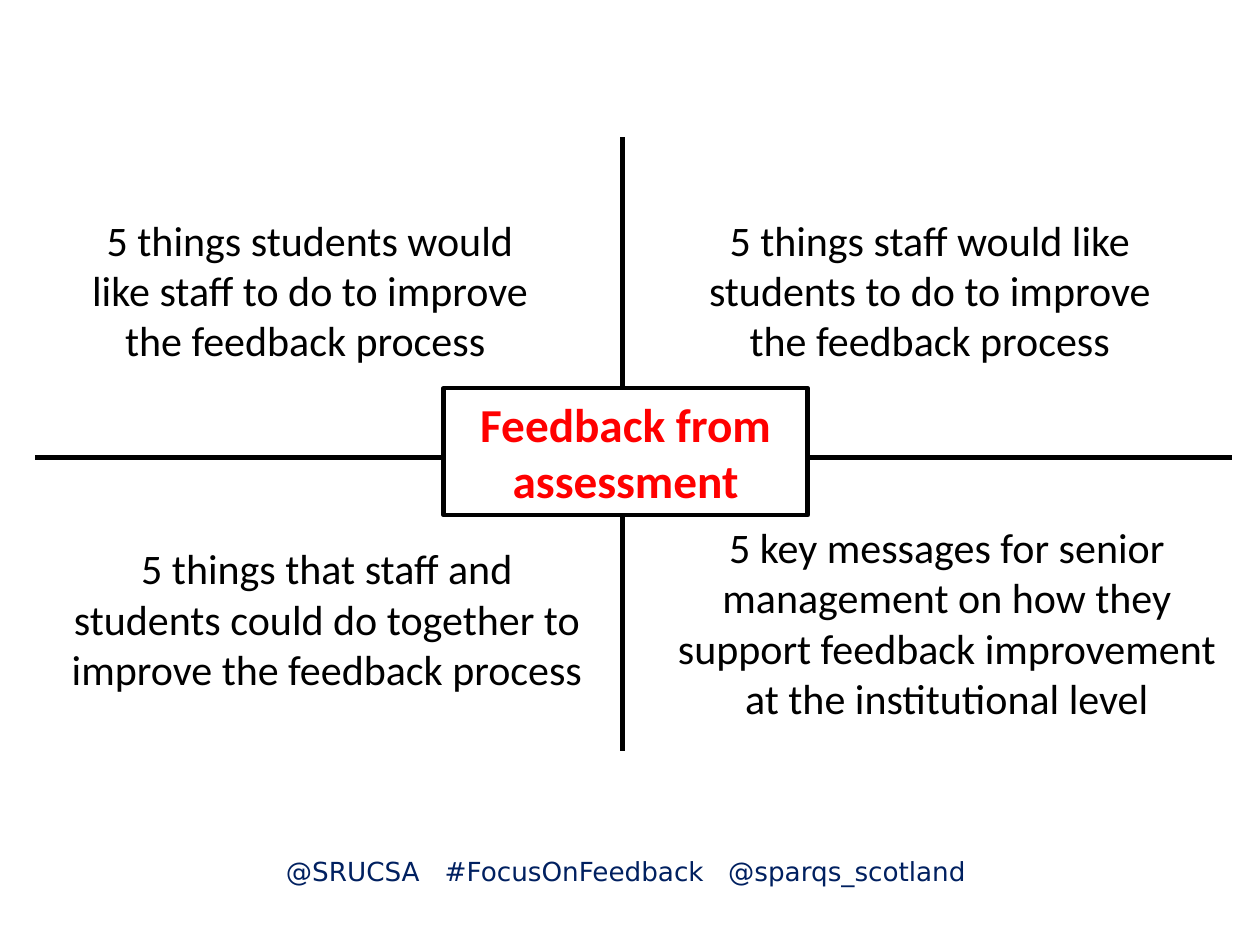
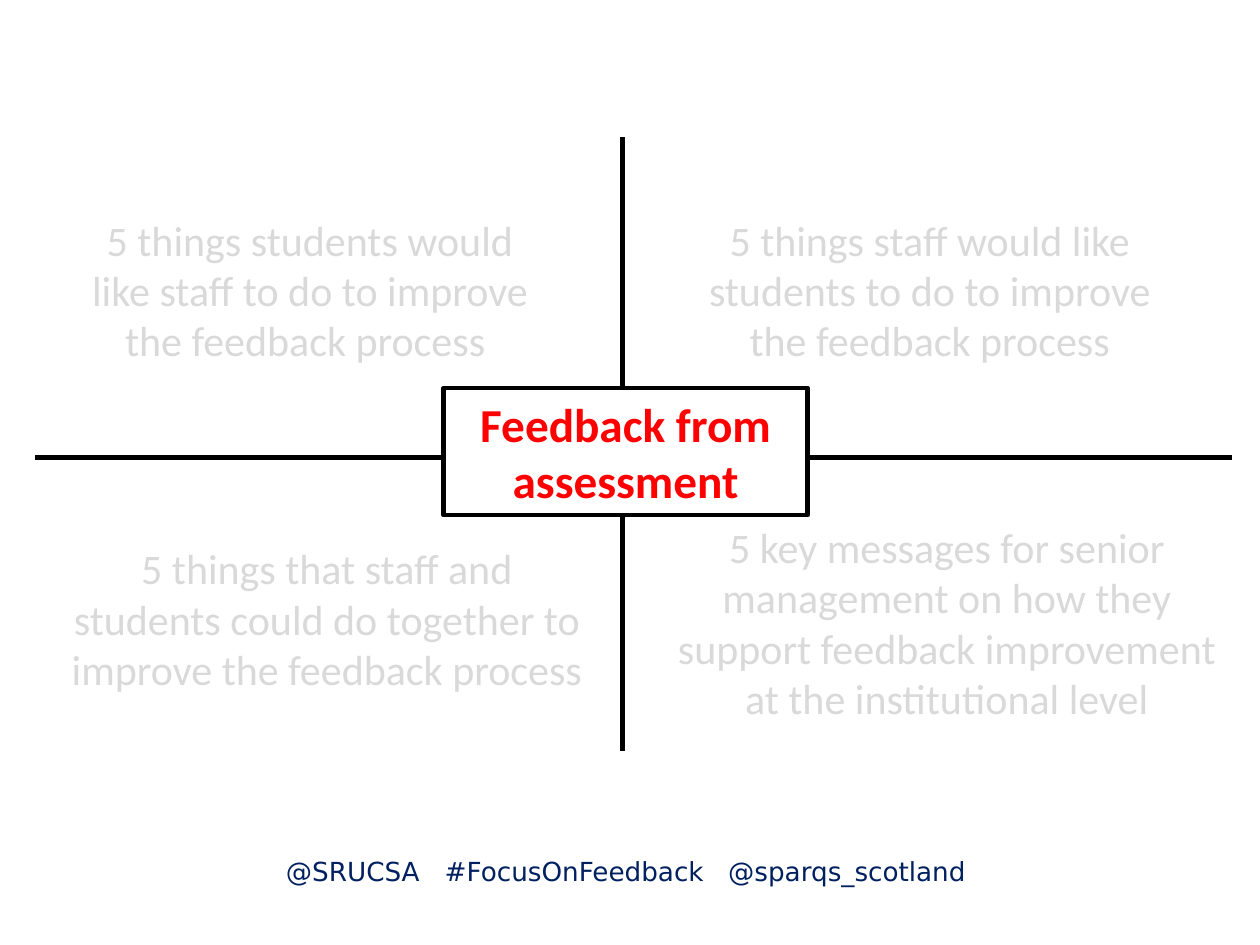
from lxml import etree
from pptx import Presentation
from pptx.dml.color import RGBColor
from pptx.enum.shapes import MSO_CONNECTOR, MSO_SHAPE
from pptx.enum.text import MSO_ANCHOR, PP_ALIGN
from pptx.oxml.ns import qn
from pptx.util import Inches, Pt

STRAIGHT = MSO_CONNECTOR.STRAIGHT
RECTANGLE = MSO_SHAPE.RECTANGLE
LEFT, CENTER = PP_ALIGN.LEFT, PP_ALIGN.CENTER
TOP, MIDDLE = MSO_ANCHOR.TOP, MSO_ANCHOR.MIDDLE

COLORS = {
    "ink": "000000",
    "faded": "D9D9D9",
    "paper": "FFFFFF",
    "topic": "FF0000",
    "footer": "002060",
}
BODY_FONT, FOOTER_FONT = "Calibri", "DejaVu Sans"
LINE_WIDTH = Pt(2.5)

# The slide is a grid of square cells, 100 columns by 75 rows
COLUMNS, ROWS = 100, 75
CELL = Inches(0.1)

# Axes of the cross: fixed position, start and end
VERTICAL_AXIS = (49.4, 10.9, 49.4, 59.6)
HORIZONTAL_AXIS = (2.8, 36.3, 97.8, 36.3)

TOPIC = "Feedback from assessment"
TOPIC_AREA = (35.2, 30.8, 28.9, 10.1)

# Prompt and area (column, row, width, height) of each quadrant
QUADRANTS = [
    ("5 things students would like staff to do to improve the feedback process ",
     (5.7, 16.5, 37.8, 13.1)),
    ("5 things staff would like students to do to improve the feedback process",
     (53.6, 16.5, 40.4, 13.1)),
    ("5 things that staff and students could do together to improve the feedback process",
     (4.1, 42.6, 43.7, 13.1)),
    ("5 key messages for senior management on how they support feedback "
     "improvement at the institutional level",
     (52.5, 40.9, 45.3, 17.2)),
]

FOOTER_TAGS = ["@SRUCSA", "#FocusOnFeedback", "@sparqs_scotland"]
FOOTER_AREA = (15.8, 67.4, 68.4, 3.5)
FOOTER_INDENT = 6.9
FOOTER_STOPS = [12.6, 35.1]


def cells(*counts):
    return [round(count * CELL) for count in counts]


def color(name):
    return RGBColor.from_string(COLORS[name])


def write(box, text, size=24, font=BODY_FONT, ink="ink", bold=False,
          align=CENTER, anchor=TOP, stops=()):
    frame = box.text_frame
    frame.word_wrap = True
    frame.vertical_anchor = anchor
    para = frame.paragraphs[0]
    para.alignment = align
    if stops:
        tabs = etree.SubElement(para._p.get_or_add_pPr(), qn("a:tabLst"))
        for stop in cells(*stops):
            etree.SubElement(tabs, qn("a:tab"), pos=str(stop), algn="l")
    span = para.add_run()
    span.text = text
    span.font.name = font
    span.font.size = Pt(size)
    span.font.bold = bold
    span.font.color.rgb = color(ink)


def add_text(page, area, text, **style):
    box = page.shapes.add_textbox(*cells(*area))
    write(box, text, **style)
    return box


def add_axis(page, ends):
    axis = page.shapes.add_connector(STRAIGHT, *cells(*ends))
    axis.line.color.rgb = color("ink")
    axis.line.width = LINE_WIDTH
    etree.SubElement(axis.element.spPr, qn("a:effectLst"))


def add_topic(page):
    box = page.shapes.add_shape(RECTANGLE, *cells(*TOPIC_AREA))
    box.shadow.inherit = False
    box.fill.solid()
    box.fill.fore_color.rgb = color("paper")
    box.line.color.rgb = color("ink")
    box.line.width = LINE_WIDTH
    write(box, TOPIC, size=27, ink="topic", bold=True, anchor=MIDDLE)


def add_footer(page):
    box = add_text(page, FOOTER_AREA, "\t".join(FOOTER_TAGS), size=15,
                   font=FOOTER_FONT, ink="footer", align=LEFT, stops=FOOTER_STOPS)
    box.text_frame.margin_left = cells(FOOTER_INDENT)[0]


def add_quadrant_page(deck, prompt_ink):
    page = deck.slides.add_slide(deck.slide_layouts.get_by_name("Blank"))
    add_footer(page)
    for ends in (VERTICAL_AXIS, HORIZONTAL_AXIS):
        add_axis(page, ends)
    for prompt, area in QUADRANTS:
        add_text(page, area, prompt, ink=prompt_ink)
    add_topic(page)


def main():
    deck = Presentation()
    deck.slide_width, deck.slide_height = cells(COLUMNS, ROWS)
    # The prompts are shown in full, then faded behind the topic
    for prompt_ink in ("ink", "faded"):
        add_quadrant_page(deck, prompt_ink)
    deck.save("out.pptx")


if __name__ == "__main__":
    main()
